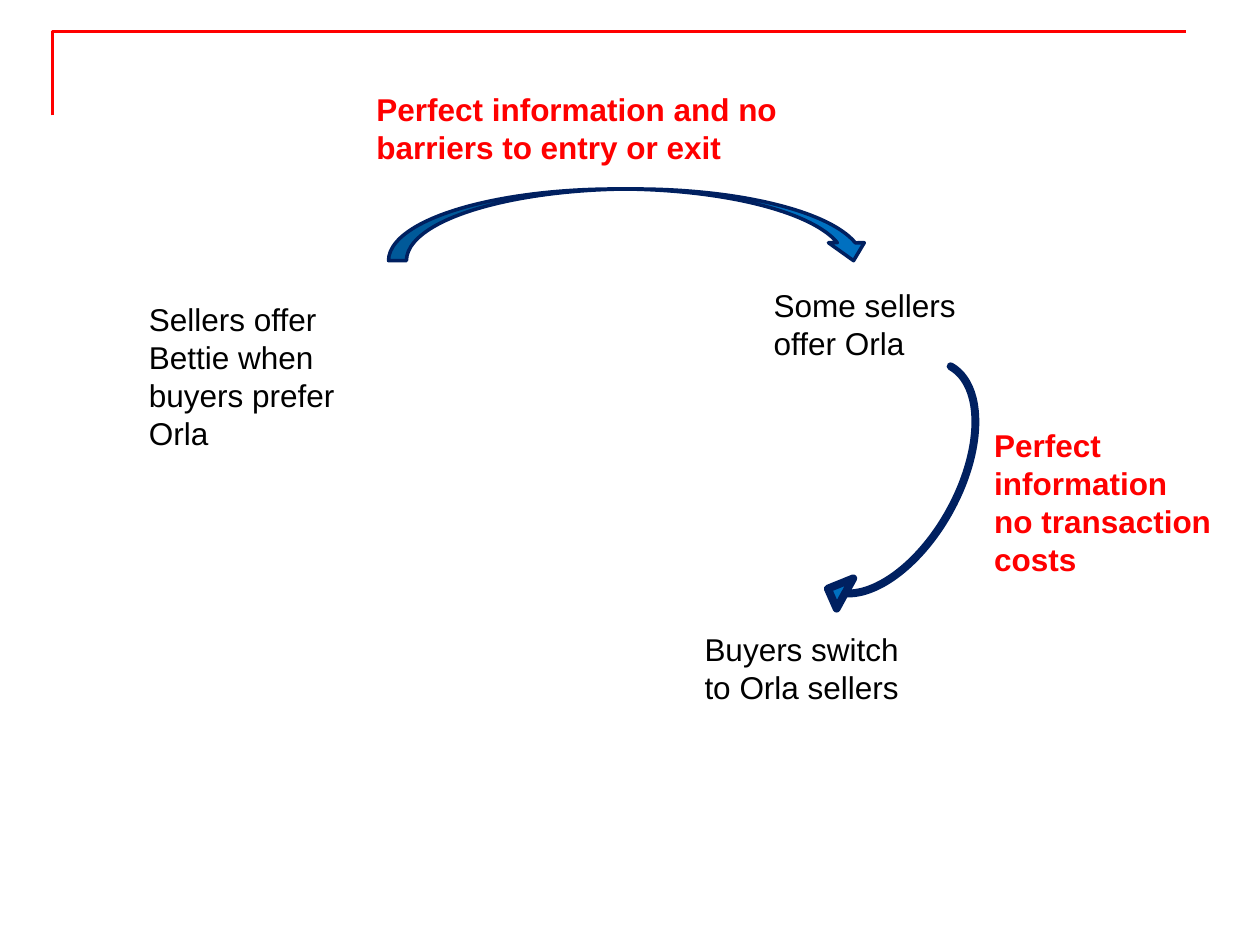
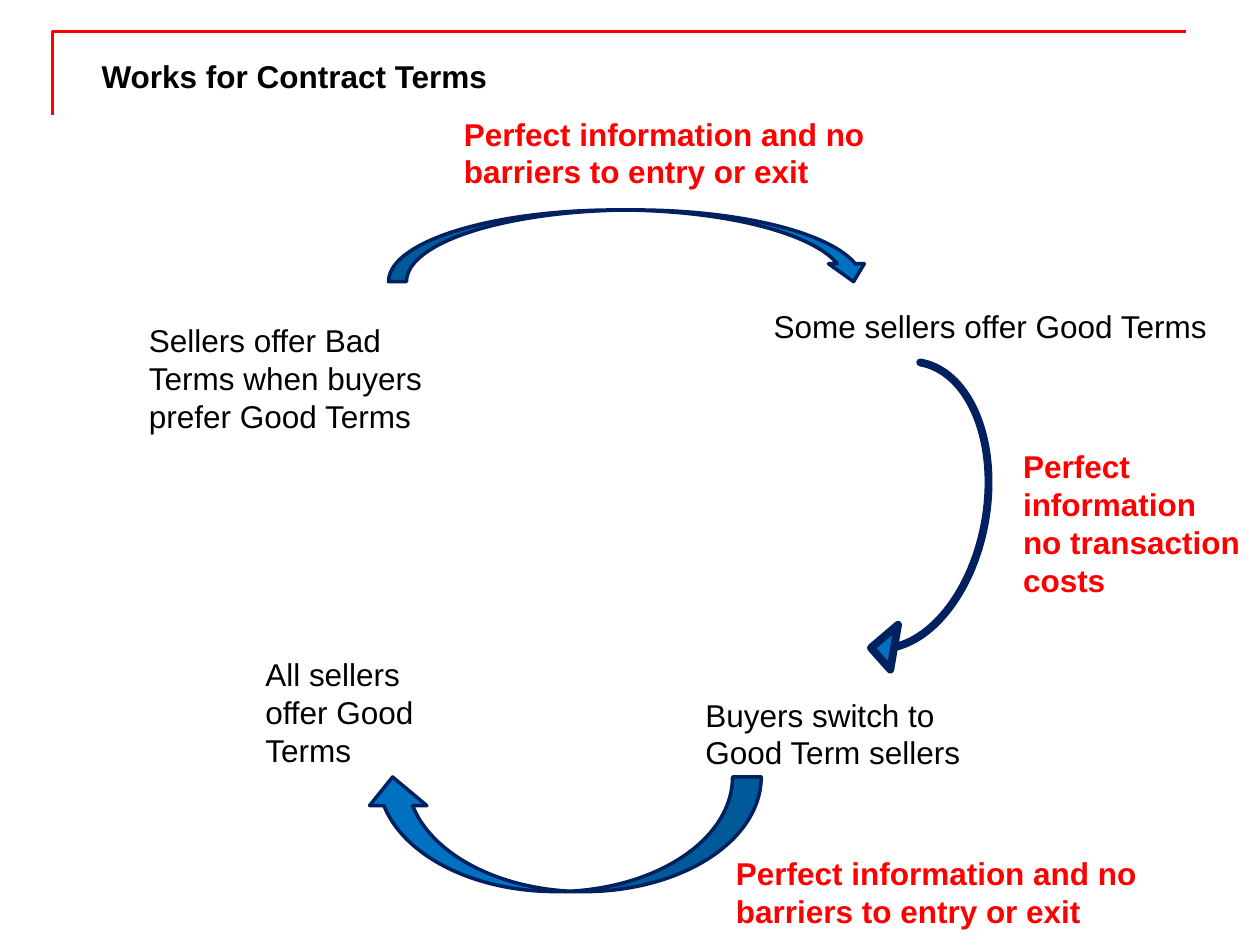
"""Build two slides on how competition moves sellers to what buyers prefer."""
from pptx import Presentation
from pptx.dml.color import RGBColor
from pptx.enum.shapes import MSO_SHAPE
from pptx.enum.text import MSO_AUTO_SIZE
from pptx.util import Pt

COLORS = {"text": "000000", "accent": "FF0000", "arrow": "0070C0", "outline": "002060"}
FONT = {"name": "Arial", "size": Pt(18)}
FRAME = {"word_wrap": True, "auto_size": MSO_AUTO_SIZE.SHAPE_TO_FIT_TEXT}
ENTRY = "Perfect information and no barriers to entry or exit"
COSTS = "Perfect\ninformation\nno transaction\ncosts"
TURN_HEAD = (0, 0.5, 0.25)


class Deck:
    def __init__(self):
        self.prs = Presentation()
        self.prs.slide_width, self.prs.slide_height = Pt(720), Pt(540)

    def color(self, name):
        return RGBColor.from_string(COLORS[name])

    def apply(self, target, formats):
        for key, value in formats.items():
            setattr(target, key, value)

    def outline(self, shape, color, width):
        shape.shadow.inherit = False
        shape.line.color.rgb = self.color(color)
        shape.line.width = Pt(width)

    def new_slide(self):
        self.slide = self.prs.slides.add_slide(self.prs.slide_layouts[6])
        corner = self.slide.shapes.build_freeform(Pt(30), Pt(66))
        corner.add_line_segments([(Pt(30), Pt(18)), (Pt(678), Pt(18))], close=False)
        rule = corner.convert_to_shape()
        rule.fill.background()
        self.outline(rule, "accent", 1.5)

    def text(self, box, wording, color="text", bold=False):
        frame = self.slide.shapes.add_textbox(*map(Pt, box)).text_frame
        self.apply(frame, FRAME)
        frame.text = wording
        for paragraph in frame.paragraphs:
            font = paragraph.runs[0].font
            self.apply(font, {**FONT, "bold": bold})
            font.color.rgb = self.color(color)

    def reason(self, box, wording):
        self.text(box, wording, "accent", True)

    def arrow(self, box, kind=MSO_SHAPE.CURVED_DOWN_ARROW, width=2, rotation=0, head=(), flip=False):
        shape = self.slide.shapes.add_shape(kind, *map(Pt, box))
        shape.rotation = rotation
        for index, value in enumerate(head):
            shape.adjustments[index] = value
        shape.fill.solid()
        shape.fill.fore_color.rgb = self.color("arrow")
        self.outline(shape, "outline", width)
        if flip:
            shape._element.spPr.xfrm.set("flipH", "1")

    def turn(self, box, rotation):
        self.arrow(box, width=4.5, rotation=rotation, head=TURN_HEAD)


def product_slide(deck):
    deck.new_slide()
    deck.arrow((222, 108, 276, 41))
    deck.text((78, 168, 126, 94), "Sellers offer Bettie when buyers prefer Orla")
    deck.text((435, 160, 126, 51), "Some sellers offer Orla")
    deck.reason((208, 48, 294, 51), ENTRY)
    deck.turn((445.5, 267, 155, 39.5), 118.9)
    deck.text((395.5, 356.5, 126, 73), "Buyers switch to Orla sellers")
    deck.reason((561, 240, 151, 94), COSTS)


def terms_slide(deck):
    deck.new_slide()
    deck.arrow((222, 120, 276, 41))
    deck.text((78, 180, 186, 73), "Sellers offer Bad Terms when buyers prefer Good Terms")
    deck.text((435, 172, 273, 29), "Some sellers offer Good Terms")
    deck.reason((258, 62, 294, 51), ENTRY)
    deck.turn((447, 273.5, 178.5, 52), 99.8)
    deck.text((396, 394, 174, 51), "Buyers switch to Good Term sellers")
    deck.reason((577.5, 252, 151, 94), COSTS)
    deck.arrow((208, 444, 227, 65.5), MSO_SHAPE.CURVED_UP_ARROW, flip=True)
    deck.text((144.5, 371, 126, 73), "All sellers offer Good Terms")
    deck.reason((413.5, 484.5, 294, 51), ENTRY)
    deck.text((51, 29, 500, 29), "Works for Contract Terms", bold=True)


def main():
    deck = Deck()
    product_slide(deck)
    terms_slide(deck)
    deck.prs.save("out.pptx")


if __name__ == "__main__":
    main()
